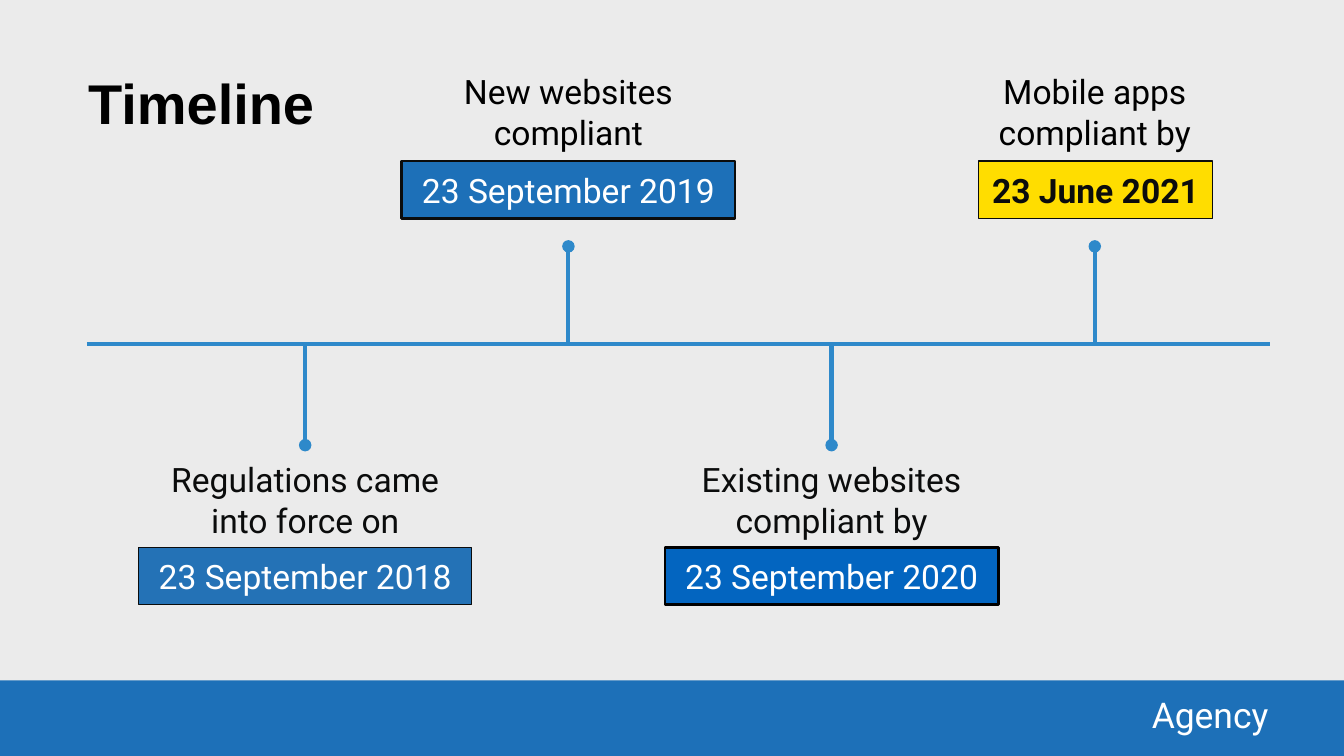
import pptx
import pptx.dml.color
import pptx.enum.shapes
import pptx.enum.text
import pptx.oxml
import pptx.oxml.ns
import pptx.util

RGB = pptx.dml.color.RGBColor
ALIGN = pptx.enum.text.PP_ALIGN
ANCHOR = pptx.enum.text.MSO_ANCHOR
RECT = pptx.enum.shapes.MSO_SHAPE.RECTANGLE
STRAIGHT = pptx.enum.shapes.MSO_CONNECTOR.STRAIGHT

PX = 9525  # EMU per px, 96 px to the inch
GREY = RGB(0xEB, 0xEB, 0xEB)
BLUE = RGB(0x1D, 0x70, 0xB8)
MID_BLUE = RGB(0x24, 0x72, 0xB6)
DEEP_BLUE = RGB(0x03, 0x65, 0xC0)
LINE_BLUE = RGB(0x2E, 0x89, 0xCA)
YELLOW = RGB(0xFF, 0xDD, 0x00)
BLACK = RGB(0x00, 0x00, 0x00)
INK = RGB(0x0B, 0x0C, 0x0C)
WHITE = RGB(0xFF, 0xFF, 0xFF)


def set_text(sp, text, size, color, align, anchor, inset, bold=False, font="Roboto"):
    tf = sp.text_frame
    tf.text = text
    tf.word_wrap = True
    tf.auto_size = pptx.enum.text.MSO_AUTO_SIZE.NONE
    tf.vertical_anchor = anchor
    tf.margin_left = tf.margin_right = tf.margin_top = tf.margin_bottom = inset * PX
    p = tf.paragraphs[0]
    p.alignment = align
    f = p.runs[0].font
    f.name, f.size, f.bold = font, pptx.util.Pt(size), bold
    f.color.rgb = color


def add_line(x1, y1, x2, y2, dot=False):
    c = s.shapes.add_connector(STRAIGHT, x1 * PX, y1 * PX, x2 * PX, y2 * PX)
    c.line.color.rgb = LINE_BLUE
    c.line.width = pptx.util.Pt(2.25)
    if dot:
        end = pptx.oxml.parse_xml(
            '<a:tailEnd %s type="oval"/>' % pptx.oxml.ns.nsdecls("a"))
        c.line._get_or_add_ln().append(end)
    c._element.spPr.append(
        pptx.oxml.parse_xml("<a:effectLst %s/>" % pptx.oxml.ns.nsdecls("a")))


prs = pptx.Presentation()
prs.slide_width, prs.slide_height = 960 * PX, 540 * PX
s = prs.slides.add_slide(prs.slide_layouts[5])
s.background.fill.solid()
s.background.fill.fore_color.rgb = GREY

# Title
title = s.shapes.title
title.left, title.top, title.width, title.height = 53 * PX, 39 * PX, 667 * PX, 54 * PX
set_text(title, "Timeline", 30, BLACK, ALIGN.LEFT, ANCHOR.TOP, 10, True, "Arial")

# Footer band
band = s.shapes.add_shape(RECT, 0, 486 * PX, 960 * PX, 54 * PX)
band.shadow.inherit = False
band.fill.solid()
band.fill.fore_color.rgb = BLUE
band.line.fill.background()
footer = s.shapes.add_textbox(620 * PX, 495 * PX, 286 * PX, 30 * PX)
set_text(footer, "Agency", 19, WHITE, ALIGN.RIGHT, ANCHOR.MIDDLE, 0)

# Time axis
AXIS_Y = 246
add_line(62, AXIS_Y, 907, AXIS_Y)

# Milestones, alternating below and above the axis:
# label, label colour, date, box width, fill, border, border width, date colour, bold
milestones = [
    ("Regulations came into force on", INK, "23 September 2018", 238,
     MID_BLUE, INK, 0.75, WHITE, False),
    ("New websites compliant", BLACK, "23 September 2019", 238,
     BLUE, INK, 1.5, WHITE, False),
    ("Existing websites compliant by", INK, "23 September 2020", 238,
     DEEP_BLUE, BLACK, 1.5, WHITE, False),
    ("Mobile apps compliant by", BLACK, "23 June 2021", 167,
     YELLOW, INK, 0.75, INK, True),
]
LABEL_W = 250
for i, (label, ink, date, w, fill, border, border_w, color, bold) in enumerate(milestones):
    x = 218 + 188 * i
    tip_y, label_y, box_y = (176, 41, 115) if i % 2 else (318, 318, 391)
    add_line(x, AXIS_Y, x, tip_y, dot=True)

    tb = s.shapes.add_textbox((x - LABEL_W // 2) * PX, label_y * PX, LABEL_W * PX, 65 * PX)
    set_text(tb, label, 18, ink, ALIGN.CENTER, ANCHOR.TOP, 10)

    box = s.shapes.add_shape(RECT, (x - w // 2) * PX, box_y * PX, w * PX, 41 * PX)
    box.shadow.inherit = False
    box.fill.solid()
    box.fill.fore_color.rgb = fill
    box.line.color.rgb = border
    box.line.width = pptx.util.Pt(border_w)
    set_text(box, date, 18, color, ALIGN.CENTER, ANCHOR.MIDDLE, 0, bold)

prs.save("out.pptx")
